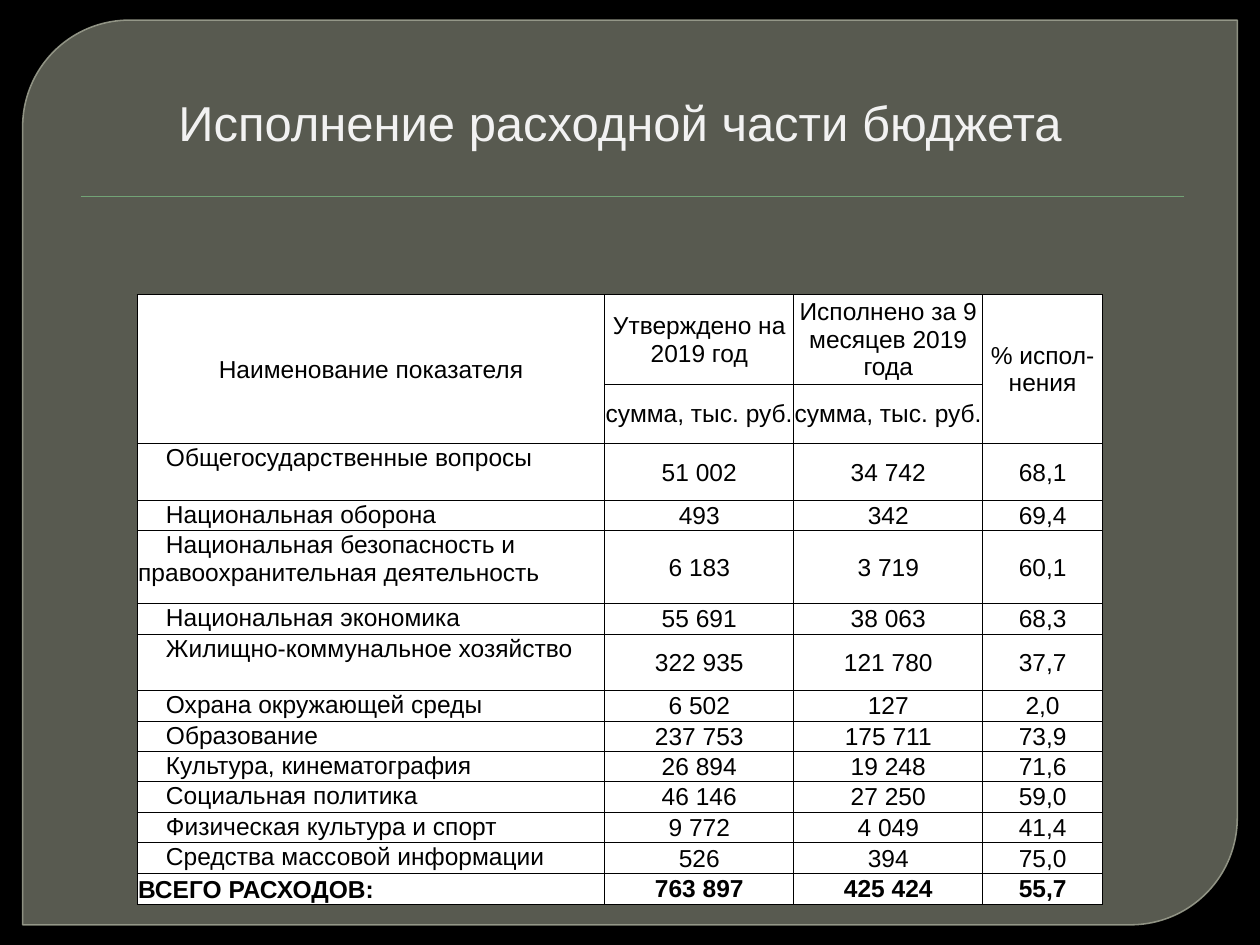
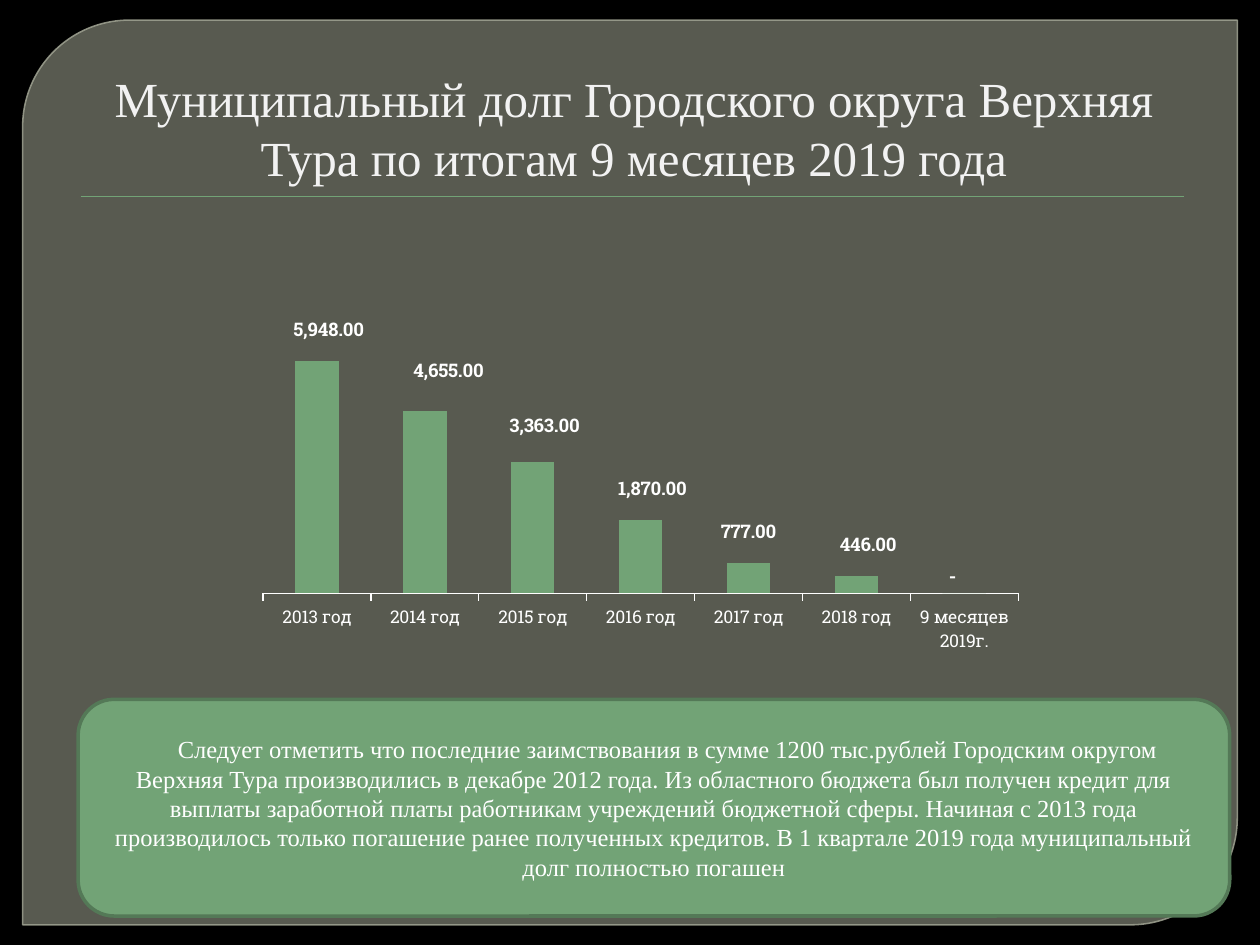
from lxml.etree import SubElement
from pptx import Presentation
from pptx.chart.data import CategoryChartData
from pptx.dml.color import RGBColor
from pptx.enum.chart import XL_CHART_TYPE as ChartType, XL_LABEL_POSITION as LabelPosition
from pptx.enum.chart import XL_TICK_MARK as TickMark
from pptx.enum.shapes import MSO_CONNECTOR as Connector, MSO_SHAPE as Shape
from pptx.enum.text import MSO_ANCHOR as Anchor, PP_ALIGN as Align
from pptx.oxml.ns import qn
from pptx.util import Inches, Pt

BLACK, WHITE, TITLE = "000000", "FFFFFF", "F2F2F2"
PANEL, PANEL_EDGE = "888B7B", "9DA090"
GREEN, GREEN_EDGE = "72A376", "547957"
SANS, SERIF, SLAB = "Arial", "Times New Roman", "Roboto Slab"
FIRST_LINE = Inches(0.22)
AMOUNT_FORMAT = '#,##0.00;-#,##0.00;"-"'
CHART_2012 = "{http://schemas.microsoft.com/office/drawing/2012/chart}"
LABELS_EXTENSION = "{CE6537A1-D6FC-4f65-9D91-7224C49458BB}"

COLUMN_WIDTHS = [3.71, 1.5, 1.5, 0.95]
HEADER_HEIGHTS = [0.67, 0.44]
HEADER = [
    ["Наименование показателя", "Утверждено на 2019 год",
     "Исполнено за 9 месяцев 2019 года", "% испол-нения"],
    ["", "сумма, тыс. руб.", "сумма, тыс. руб.", ""],
]
EXPENSES = [
    (0.45, "Общегосударственные вопросы", "51 002", "34 742", "68,1"),
    (0.23, "Национальная оборона", "493", "342", "69,4"),
    (0.58, "Национальная безопасность и правоохранительная деятельность",
     "6 183", "3 719", "60,1"),
    (0.23, "Национальная экономика", "55 691", "38 063", "68,3"),
    (0.45, "Жилищно-коммунальное хозяйство", "322 935", "121 780", "37,7"),
    (0.23, "Охрана окружающей среды", "6 502", "127", "2,0"),
    (0.23, "Образование", "237 753", "175 711", "73,9"),
    (0.23, "Культура, кинематография", "26 894", "19 248", "71,6"),
    (0.23, "Социальная политика", "46 146", "27 250", "59,0"),
    (0.23, "Физическая культура и спорт", "9 772", "4 049", "41,4"),
    (0.25, "Средства массовой информации", "526", "394", "75,0"),
    (0.23, "ВСЕГО РАСХОДОВ:", "763 897", "425 424", "55,7"),
]
DEBT = [
    ("2013 год", 5948, 0.01, -0.03),
    ("2014 год", 4655, 0.02, -0.05),
    ("2015 год", 3363, 0.01, -0.04),
    ("2016 год", 1870, 0.01, -0.03),
    ("2017 год", 777, 0, -0.03),
    ("2018 год", 446, 0.01, -0.03),
    ("9 месяцев 2019г.", 0, -0.01, 0),
]
DEBT_NOTE = (
    "Следует отметить что последние заимствования в сумме 1200 тыс.рублей Городским округом "
    "Верхняя Тура производились в декабре 2012 года. Из областного бюджета был получен кредит "
    "для выплаты заработной платы работникам учреждений бюджетной сферы. Начиная с 2013 года "
    "производилось только погашение ранее полученных кредитов. В 1 квартале 2019 года "
    "муниципальный долг полностью погашен"
)


def rgb(value):
    return RGBColor.from_string(value)


def box(*lengths):
    return [Inches(length) for length in lengths]


def set_alpha(fill, percent):
    for color in fill.iter(qn("a:srgbClr")):
        SubElement(color, qn("a:alpha"), val=str(percent * 1000))


def lay_out(parent, position, **settings):
    for old in parent.findall(qn("c:layout")):
        parent.remove(old)
    layout = SubElement(parent, qn("c:layout"))
    parent.insert(position, layout)
    manual = SubElement(layout, qn("c:manualLayout"))
    for tag, value in settings.items():
        SubElement(manual, qn(f"c:{tag}"), val=str(value))


def hide_leader_lines(labels):
    SubElement(labels, qn("c:showLeaderLines"), val="0")
    extensions = SubElement(labels, qn("c:extLst"))
    extension = SubElement(extensions, qn("c:ext"), uri=LABELS_EXTENSION)
    SubElement(extension, CHART_2012 + "showLeaderLines", val="0")


class Deck:
    def __init__(self):
        self.presentation = Presentation()
        self.presentation.slide_width = Inches(10)
        self.presentation.slide_height = Inches(7.5)
        self.slide = None

    def style_font(self, font, size, name, color, bold=False):
        font.size, font.name, font.bold = Pt(size), name, bold
        font.color.rgb = rgb(color)

    def new_slide(self):
        self.slide = self.presentation.slides.add_slide(self.presentation.slide_layouts[6])
        background = self.slide.background.fill
        background.solid()
        background.fore_color.rgb = rgb(BLACK)
        panel = self.panel(Shape.ROUND_2_DIAG_RECTANGLE, box(0.18, 0.16, 9.64, 7.18),
                           PANEL, PANEL_EDGE, 0.87)
        panel.adjustments[0] = 0.118
        properties = panel._element.spPr
        set_alpha(properties.find(qn("a:solidFill")), 65)
        set_alpha(properties.find(qn("a:ln")), 88)
        self.rule()

    def panel(self, kind, place, fill, edge, width):
        panel = self.slide.shapes.add_shape(kind, *place)
        panel.shadow.inherit = False
        panel.fill.solid()
        panel.fill.fore_color.rgb = rgb(fill)
        panel.line.color.rgb = rgb(edge)
        panel.line.width = Pt(width)
        return panel

    def rule(self):
        rule = self.slide.shapes.add_connector(Connector.STRAIGHT, *box(0.64, 1.56, 9.4, 1.56))
        rule.line.color.rgb = rgb(GREEN)
        rule.line.width = Pt(0.75)
        SubElement(rule._element.spPr, qn("a:effectLst"))

    def title(self, text, place, font):
        frame = self.slide.shapes.add_textbox(*place).text_frame
        frame.word_wrap = True
        frame.vertical_anchor = Anchor.BOTTOM
        heading = frame.paragraphs[0]
        heading.text, heading.alignment = text, Align.CENTER
        self.style_font(heading.font, 28, font, TITLE)

    def note(self, text, place):
        frame = self.panel(Shape.ROUNDED_RECTANGLE, place, GREEN, GREEN_EDGE, 2).text_frame
        frame.word_wrap = True
        frame.vertical_anchor = Anchor.MIDDLE
        frame.margin_left = frame.margin_right = Inches(0.17)
        remark = frame.paragraphs[0]
        remark.text, remark.alignment = text, Align.CENTER
        remark._p.get_or_add_pPr().set("indent", str(FIRST_LINE))
        self.style_font(remark.font, 14, SERIF, WHITE)

    def cell(self, cell, text, align, anchor, bold=False, indent=0):
        properties = cell._tc.get_or_add_tcPr()
        for side in ("lnL", "lnR", "lnT", "lnB"):
            border = SubElement(properties, qn(f"a:{side}"), w=str(Pt(0.5)))
            SubElement(SubElement(border, qn("a:solidFill")), qn("a:srgbClr"), val=BLACK)
        cell.fill.solid()
        cell.fill.fore_color.rgb = rgb(WHITE)
        cell.margin_left = cell.margin_right = cell.margin_top = Pt(0.5)
        cell.margin_bottom = 0
        cell.vertical_anchor = anchor
        entry = cell.text_frame.paragraphs[0]
        entry.text, entry.alignment = text, align
        entry._p.get_or_add_pPr().set("indent", str(indent))
        for run in entry.runs:
            self.style_font(run.font, 14, SANS, BLACK, bold)

    def expense_table(self, left, top):
        heights = HEADER_HEIGHTS + [expense[0] for expense in EXPENSES]
        place = box(left, top, sum(COLUMN_WIDTHS), sum(heights))
        table = self.slide.shapes.add_table(len(heights), len(COLUMN_WIDTHS), *place).table
        table.first_row = table.horz_banding = False
        for column, width in zip(table.columns, COLUMN_WIDTHS):
            column.width = Inches(width)
        for row, height in zip(table.rows, heights):
            row.height = Inches(height)
        for row, labels in enumerate(HEADER):
            for column, label in enumerate(labels):
                self.cell(table.cell(row, column), label, Align.CENTER, Anchor.MIDDLE)
        for column in (0, 3):
            table.cell(0, column).merge(table.cell(1, column))
        for row, (_, name, *figures) in enumerate(EXPENSES, len(HEADER)):
            total = row == len(heights) - 1
            self.cell(table.cell(row, 0), name, Align.LEFT,
                      Anchor.BOTTOM if total else Anchor.TOP, total, 0 if total else FIRST_LINE)
            for column, figure in enumerate(figures, 1):
                self.cell(table.cell(row, column), figure, Align.CENTER, Anchor.MIDDLE, total)

    def debt_chart(self, place):
        years, amounts, shifts_x, shifts_y = zip(*DEBT)
        debt = CategoryChartData(number_format=AMOUNT_FORMAT)
        debt.categories = years
        debt.add_series("Муниципальный долг", amounts)
        chart = self.slide.shapes.add_chart(ChartType.COLUMN_CLUSTERED, *place, debt).chart
        chart.has_legend = chart.has_title = False
        self.style_font(chart.font, 10, SLAB, WHITE)
        lay_out(chart._chartSpace.chart.plotArea, 0, layoutTarget="inner", xMode="edge",
                yMode="edge", x=0.181, y=0.214, w=0.639, h=0.582)

        amount_axis, year_axis = chart.value_axis, chart.category_axis
        amount_axis.visible = amount_axis.has_major_gridlines = False
        amount_axis.minimum_scale, amount_axis.maximum_scale = 0, 7000
        year_axis.major_tick_mark = TickMark.OUTSIDE
        year_axis.format.line.color.rgb = rgb(WHITE)
        year_axis.format.line.width = Pt(0.75)

        plot = chart.plots[0]
        plot.gap_width, plot.vary_by_categories = 148, False
        bars = plot.series[0]
        bars.format.fill.solid()
        bars.format.fill.fore_color.rgb = rgb(GREEN)
        labels = bars.data_labels
        labels.show_value = True
        labels.number_format, labels.number_format_is_linked = AMOUNT_FORMAT, False
        self.style_font(labels.font, 10.7, SLAB, WHITE, True)
        for index in range(len(DEBT)):
            label = bars.points[index].data_label
            label.position = LabelPosition.OUTSIDE_END
            self.style_font(label.font, 10.7, SLAB, WHITE, True)
        for label, x, y in zip(bars._element.iter(qn("c:dLbl")), shifts_x, shifts_y):
            lay_out(label, 1, x=x, y=y)
        hide_leader_lines(bars._element.find(qn("c:dLbls")))


def main():
    deck = Deck()

    deck.new_slide()
    deck.title("Исполнение расходной части бюджета", box(0.42, 0.29, 9, 0.96), SANS)
    deck.expense_table(1.09, 2.34)

    deck.new_slide()
    deck.title("Муниципальный долг Городского округа Верхняя Тура по итогам 9 месяцев 2019 года",
               box(0.53, 0.28, 9, 1.25), SERIF)
    deck.note(DEBT_NOTE, box(0.62, 5.55, 9.14, 1.72))
    deck.debt_chart(box(0.39, 1.74, 9.38, 3.73))

    deck.presentation.save("out.pptx")


if __name__ == "__main__":
    main()
